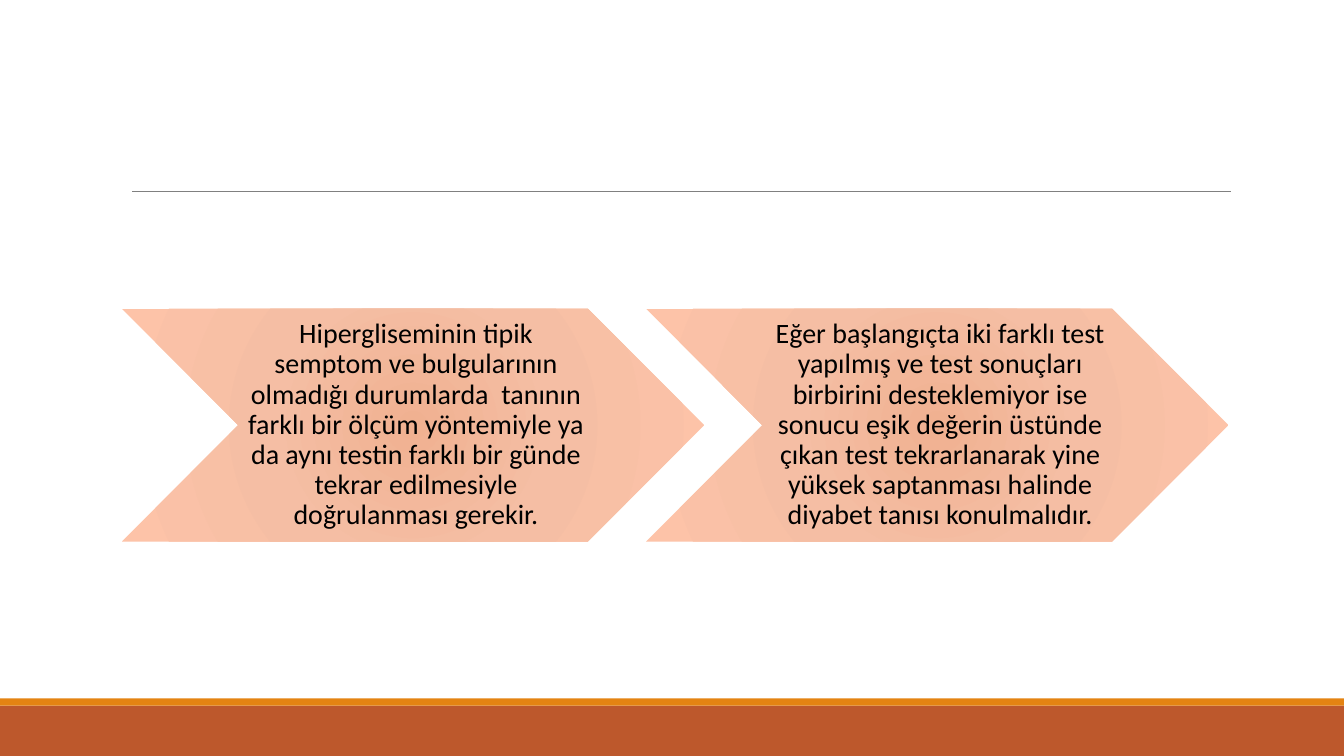
"""Build a slide with two chevron steps on confirming a diabetes diagnosis."""
import pptx
import pptx.dml.color
import pptx.enum.shapes
import pptx.enum.text
import pptx.oxml
import pptx.oxml.ns
import pptx.oxml.xmlchemy
import pptx.util

Cm = pptx.util.Cm
RGB = pptx.dml.color.RGBColor.from_string
SHAPE = pptx.enum.shapes.MSO_SHAPE

STEPS = [
    "Hipergliseminin tipik semptom ve bulgularının olmadığı durumlarda  tanının "
    "farklı bir ölçüm yöntemiyle ya da aynı testin farklı bir günde tekrar "
    "edilmesiyle doğrulanması gerekir.",
    "Eğer başlangıçta iki farklı test yapılmış ve test sonuçları birbirini "
    "desteklemiyor ise sonucu eşik değerin üstünde çıkan test tekrarlanarak yine "
    "yüksek saptanması halinde diyabet tanısı konulmalıdır.",
]
COLORS = {"band": "BD582C", "stripe": "E48312", "rule": "808080", "text": "000000"}
GRADIENT = {0: "F0B191", 45: "F5BEA4", 100: "FDC3A8"}
SLIDE_W, SLIDE_H = 33.87, 19.05
BARS = [("band", 17.78, 1.27), ("stripe", 17.6, 0.18)]
RULE = {"left": 3.33, "right": 31.01, "y": 4.83}
LEFT, TOP, WIDTH, HEIGHT, STEP = 3.07, 7.78, 14.68, 5.87, 13.21
FRAME = {
    "word_wrap": True,
    "auto_size": pptx.enum.text.MSO_AUTO_SIZE.NONE,
    "vertical_anchor": pptx.enum.text.MSO_ANCHOR.MIDDLE,
    "margin_left": Cm(0.23),
    "margin_top": Cm(0.08),
    "margin_right": Cm(0.08),
    "margin_bottom": Cm(0.08),
}
PARAGRAPH = {"alignment": pptx.enum.text.PP_ALIGN.CENTER, "line_spacing": 0.9}
FONT = {"name": "Calibri", "size": pptx.util.Pt(20)}


def apply(target, values):
    for key, value in values.items():
        setattr(target, key, value)


def add_plain(s, kind, left, top, width, height):
    sp = s.shapes.add_shape(kind, Cm(left), Cm(top), Cm(width), Cm(height))
    sp.shadow.inherit = False
    sp.line.fill.background()
    return sp


def radial_fill(sp):
    stops = "".join(
        f'<a:gs pos="{pos * 1000}"><a:srgbClr val="{color}"/></a:gs>'
        for pos, color in GRADIENT.items()
    )
    sp.fill.gradient()
    old = sp._element.spPr.find(pptx.oxml.ns.qn("a:gradFill"))
    new = pptx.oxml.parse_xml(
        f'<a:gradFill {pptx.oxml.ns.nsdecls("a")} rotWithShape="1">'
        f'<a:gsLst>{stops}</a:gsLst><a:path path="circle">'
        '<a:fillToRect l="100000" t="100000" r="100000" b="100000"/>'
        "</a:path></a:gradFill>"
    )
    old.getparent().replace(old, new)


def add_step(s, left, text):
    radial_fill(add_plain(s, SHAPE.CHEVRON, left, TOP, WIDTH, HEIGHT))
    notch = HEIGHT / 2
    box = s.shapes.add_textbox(
        Cm(left + notch), Cm(TOP), Cm(WIDTH - 2 * notch), Cm(HEIGHT)
    )
    tf = box.text_frame
    apply(tf, FRAME)
    p = tf.paragraphs[0]
    apply(p, PARAGRAPH)
    r = p.add_run()
    r.text = text
    apply(r.font, FONT)
    r.font.color.rgb = RGB(COLORS["text"])


def main():
    prs = pptx.Presentation()
    prs.slide_width, prs.slide_height = Cm(SLIDE_W), Cm(SLIDE_H)
    s = prs.slides.add_slide(prs.slide_layouts[6])
    for name, top, height in BARS:
        sp = add_plain(s, SHAPE.RECTANGLE, 0, top, SLIDE_W, height)
        sp.fill.solid()
        sp.fill.fore_color.rgb = RGB(COLORS[name])
    rule = s.shapes.add_connector(
        pptx.enum.shapes.MSO_CONNECTOR.STRAIGHT,
        Cm(RULE["left"]), Cm(RULE["y"]), Cm(RULE["right"]), Cm(RULE["y"]),
    )
    rule.line.color.rgb = RGB(COLORS["rule"])
    rule.line.width = pptx.util.Pt(0.5)
    rule._element.spPr.append(pptx.oxml.xmlchemy.OxmlElement("a:effectLst"))
    for i, text in enumerate(STEPS):
        add_step(s, LEFT + i * STEP, text)
    prs.save("out.pptx")


if __name__ == "__main__":
    main()
